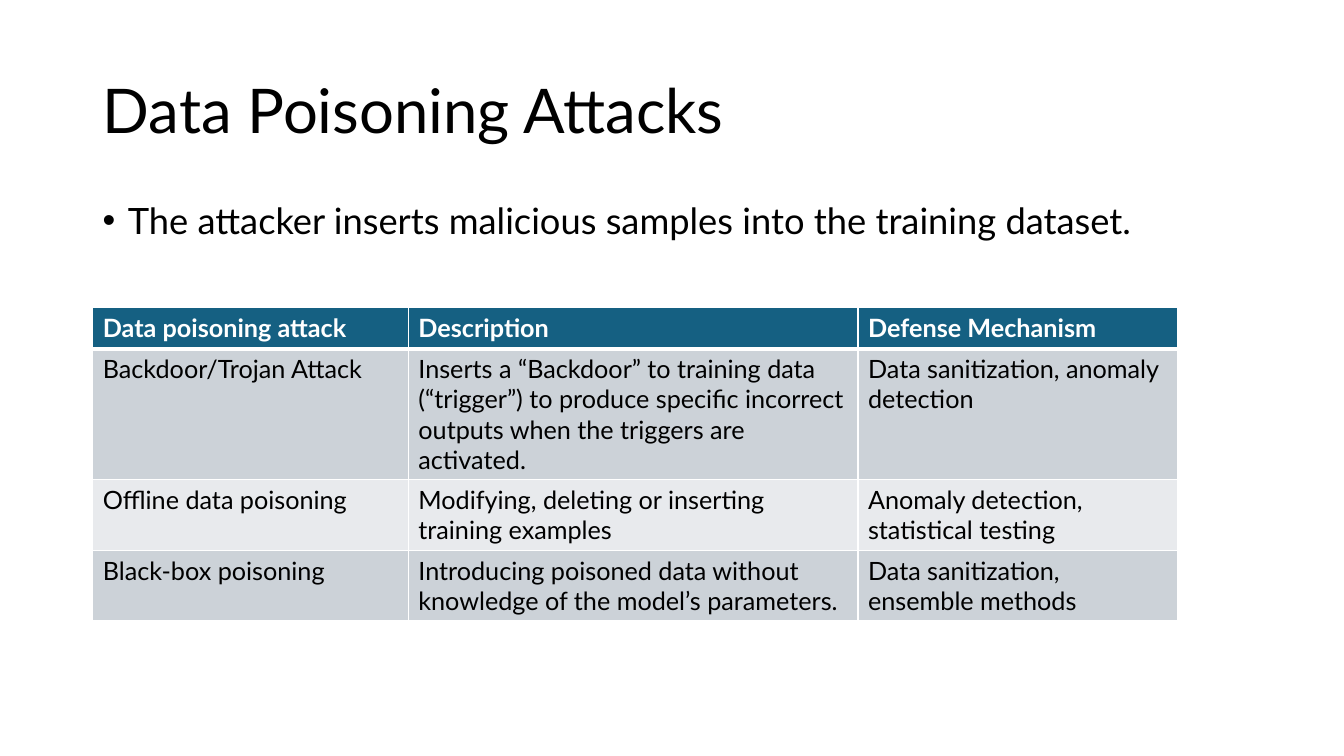
"""Build the slide on data poisoning attacks and their defenses."""
from lxml.etree import SubElement
from pptx import Presentation
from pptx.dml.color import RGBColor
from pptx.enum.text import MSO_ANCHOR, PP_ALIGN
from pptx.oxml.ns import qn
from pptx.util import Inches, Pt

TITLE = "Data Poisoning Attacks"
STATEMENT = "The attacker inserts malicious samples into the training dataset."
ATTACKS = [
    ("Data poisoning attack", "Description", "Defense Mechanism"),
    ("Backdoor/Trojan Attack",
     "Inserts a “Backdoor” to training data (“trigger”) to produce specific "
     "incorrect outputs when the triggers are activated.",
     "Data sanitization, anomaly detection"),
    ("Offline data poisoning",
     "Modifying, deleting or inserting training examples",
     "Anomaly detection, statistical testing"),
    ("Black-box poisoning",
     "Introducing poisoned data without knowledge of the model’s parameters.",
     "Data sanitization, ensemble methods"),
]
COLORS = {"text": "000000", "header": "156082", "odd": "CCD2D8",
          "even": "E8EAED", "white": "FFFFFF"}
FONT = "Lato"
LEFT, WIDTH = 0.92, 11.5
COLUMN_WIDTHS = (3.13, 4.46, 3.17)
ROW_HEIGHT = 0.41


def place(shape, top, height):
    """Set a shape on the common left edge and width."""
    shape.left, shape.top = Inches(LEFT), Inches(top)
    shape.width, shape.height = Inches(WIDTH), Inches(height)


def write(para, text, size, color="text", bold=False):
    """Add one formatted run to a paragraph."""
    span = para.add_run()
    span.text = text
    span.font.name = FONT
    span.font.size = Pt(size)
    span.font.bold = bold
    span.font.color.rgb = RGBColor.from_string(COLORS[color])


def add_borders(cell, widths):
    """Draw white borders of the given point widths around a cell."""
    properties = cell._tc.get_or_add_tcPr()
    for side, width in widths.items():
        line = SubElement(properties, qn(f"a:ln{side}"), w=str(Pt(width)))
        fill = SubElement(line, qn("a:solidFill"))
        SubElement(fill, qn("a:srgbClr"), val=COLORS["white"])


def add_title(page):
    """Fill the title placeholder."""
    title = page.shapes.title
    place(title, 0.4, 1.45)
    title.text_frame.vertical_anchor = MSO_ANCHOR.MIDDLE
    para = title.text_frame.paragraphs[0]
    para.alignment = PP_ALIGN.LEFT
    para.line_spacing = 0.9
    write(para, TITLE, 44)


def add_statement(page):
    """Add the bulleted sentence under the title."""
    box = page.shapes.add_textbox(0, 0, 0, 0)
    place(box, 2, 0.48)
    box.text_frame.word_wrap = True
    para = box.text_frame.paragraphs[0]
    para.line_spacing = 0.8
    para.space_before = Pt(10)
    properties = para._p.get_or_add_pPr()
    properties.set("marL", str(Inches(0.25)))
    properties.set("indent", str(Inches(-0.25)))
    SubElement(properties, qn("a:buFont"), typeface="Arial")
    SubElement(properties, qn("a:buChar"), char="•")
    write(para, STATEMENT, 25.9)


def add_attack_table(page):
    """Add the table of attacks with a header and banded rows."""
    table = page.shapes.add_table(
        len(ATTACKS), len(COLUMN_WIDTHS), Inches(LEFT), Inches(3.05),
        Inches(sum(COLUMN_WIDTHS)), Inches(ROW_HEIGHT * len(ATTACKS))).table
    for column, width in zip(table.columns, COLUMN_WIDTHS):
        column.width = Inches(width)
    for index, texts in enumerate(ATTACKS):
        header = index == 0
        band = "header" if header else "odd" if index % 2 else "even"
        top, bottom = 3 if index == 1 else 1, 3 if header else 1
        table.rows[index].height = Inches(ROW_HEIGHT)
        for cell, text in zip(table.rows[index].cells, texts):
            add_borders(cell, {"L": 1, "R": 1, "T": top, "B": bottom})
            cell.fill.solid()
            cell.fill.fore_color.rgb = RGBColor.from_string(COLORS[band])
            write(cell.text_frame.paragraphs[0], text, 18,
                  "white" if header else "text", header)


def main():
    """Create the deck and save it."""
    deck = Presentation()
    deck.slide_width, deck.slide_height = Inches(13.33), Inches(7.5)
    page = deck.slides.add_slide(deck.slide_layouts.get_by_name("Title Only"))
    add_title(page)
    add_statement(page)
    add_attack_table(page)
    deck.save("out.pptx")


if __name__ == "__main__":
    main()
